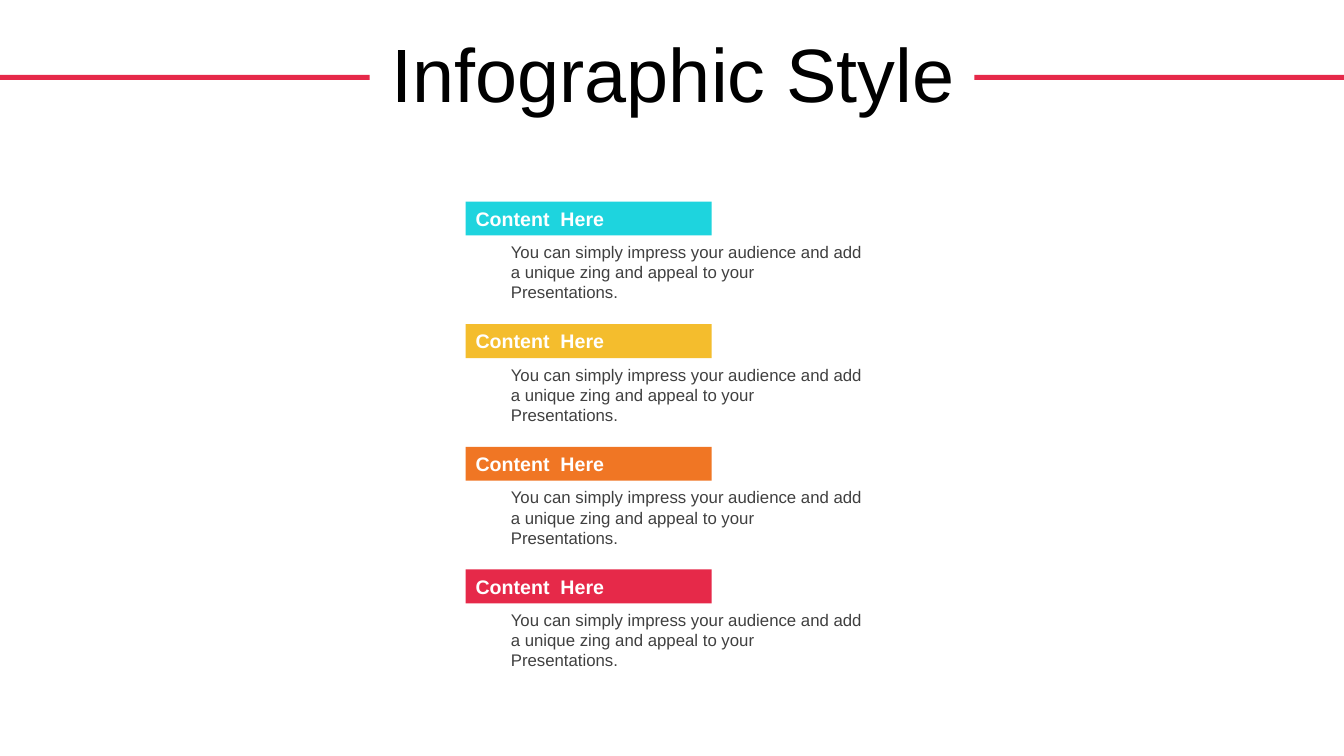
from pptx import Presentation
from pptx.dml.color import RGBColor
from pptx.enum.shapes import MSO_SHAPE
from pptx.enum.text import MSO_ANCHOR, PP_ALIGN
from pptx.util import Pt

TITLE = "Infographic Style"
HEADING = "Content  Here"
DESCRIPTION = (
    "You can simply impress your audience and add a unique zing "
    "and appeal to your Presentations."
)
SECTIONS = [
    (HEADING, DESCRIPTION, "1ED4DE"),
    (HEADING, DESCRIPTION, "F4BD2D"),
    (HEADING, DESCRIPTION, "F07624"),
    (HEADING, DESCRIPTION, "E62949"),
]
RULE_COLOR = "E62949"
SLIDE_WIDTH, SLIDE_HEIGHT = 960, 540
RULE_TOP, RULE_WIDTH, RULE_HEIGHT = 53.5, 264, 3.6
FIRST_TOP, SECTION_STEP = 144, 87.6
BANNER_LEFT, BANNER_WIDTH, BANNER_HEIGHT = 332.6, 175.7, 24.2
DESCRIPTION_LEFT, DESCRIPTION_WIDTH, DESCRIPTION_HEIGHT = 357.8, 265.7, 36
DESCRIPTION_OFFSET = 25.2


def color(value):
    return RGBColor.from_string(value)


def add_bar(slide, left, top, width, height, fill):
    bar = slide.shapes.add_shape(
        MSO_SHAPE.RECTANGLE, Pt(left), Pt(top), Pt(width), Pt(height)
    )
    bar.shadow.inherit = False
    bar.fill.solid()
    bar.fill.fore_color.rgb = color(fill)
    bar.line.fill.background()
    return bar


def set_text(shape, text, size, font_color, anchor, alignment=PP_ALIGN.LEFT, bold=False):
    frame = shape.text_frame
    frame.word_wrap = True
    frame.vertical_anchor = anchor
    frame.text = text
    paragraph = frame.paragraphs[0]
    paragraph.alignment = alignment
    paragraph.font.name = "Arial"
    paragraph.font.size = Pt(size)
    paragraph.font.bold = bold
    paragraph.font.color.rgb = color(font_color)
    return paragraph


def add_title(slide):
    title = slide.shapes.title
    title.left, title.top = Pt(25.2), Pt(22.3)
    title.width, title.height = Pt(911.5), Pt(66.2)
    paragraph = set_text(title, TITLE, 54, "000000", MSO_ANCHOR.MIDDLE, PP_ALIGN.CENTER)
    paragraph.line_spacing = 0.9


def add_section(slide, top, heading, description, fill):
    banner = add_bar(slide, BANNER_LEFT, top, BANNER_WIDTH, BANNER_HEIGHT, fill)
    set_text(banner, heading, 14, "FFFFFF", MSO_ANCHOR.MIDDLE, bold=True)
    box = slide.shapes.add_textbox(
        Pt(DESCRIPTION_LEFT), Pt(top + DESCRIPTION_OFFSET),
        Pt(DESCRIPTION_WIDTH), Pt(DESCRIPTION_HEIGHT),
    )
    set_text(box, description, 12, "404040", MSO_ANCHOR.TOP)


def main():
    presentation = Presentation()
    presentation.slide_width = Pt(SLIDE_WIDTH)
    presentation.slide_height = Pt(SLIDE_HEIGHT)
    slide = presentation.slides.add_slide(presentation.slide_layouts[5])
    for left in (0, SLIDE_WIDTH - RULE_WIDTH):
        add_bar(slide, left, RULE_TOP, RULE_WIDTH, RULE_HEIGHT, RULE_COLOR)
    add_title(slide)
    for index, section in enumerate(SECTIONS):
        add_section(slide, FIRST_TOP + index * SECTION_STEP, *section)
    presentation.save("out.pptx")


if __name__ == "__main__":
    main()
